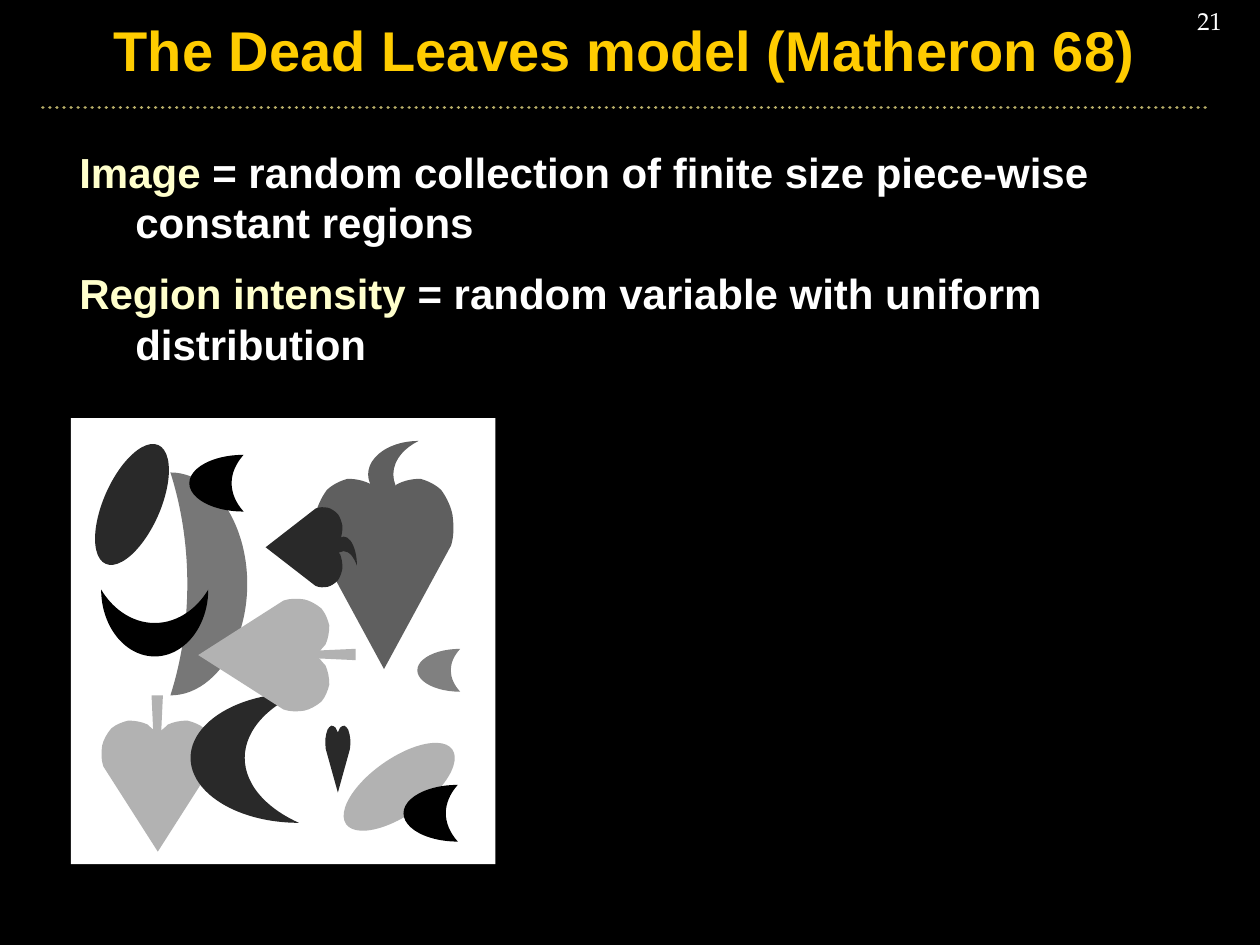
from pptx import Presentation
from pptx.dml.color import RGBColor
from pptx.enum import dml, shapes, text
from pptx.oxml import ns
from pptx.util import Pt
from lxml import etree

BLACK = RGBColor(0x00, 0x00, 0x00)
WHITE = RGBColor(0xFF, 0xFF, 0xFF)
GOLD = RGBColor(0xFF, 0xCC, 0x00)
CREAM = RGBColor(0xFF, 0xFF, 0xCC)
KHAKI = RGBColor(0xB8, 0xAE, 0x68)
CHARCOAL = RGBColor(0x29, 0x29, 0x29)
SLATE = RGBColor(0x5F, 0x5F, 0x5F)
GREY = RGBColor(0x77, 0x77, 0x77)
MID_GREY = RGBColor(0x80, 0x80, 0x80)
SILVER = RGBColor(0xB2, 0xB2, 0xB2)

LOBE = [
    (0, 0.1),
    (0.02, 0.08), (0.07, 0.05), (0.09, 0.03),
    (0.14, 0.01), (0.2, 0), (0.26, 0),
    (0.31, 0.01), (0.37, 0.03), (0.41, 0.06),
    (0.45, 0.1), (0.48, 0.15), (0.49, 0.19),
    (0.5, 0.25), (0.5, 0.3), (0.48, 0.35),
]
LEAF = ([(0.5 + u, v) for u, v in LOBE] + [(0.5, 1)]
        + [(0.5 - u, v) for u, v in reversed(LOBE)])
STEM = [(0, 0), (0.22, 1), (0.78, 1), (1, 0)]
OUTLINES = {"leaf": LEAF, "stem": STEM}
PRESETS = {
    "moon": shapes.MSO_SHAPE.MOON,
    "oval": shapes.MSO_SHAPE.OVAL,
    "panel": shapes.MSO_SHAPE.RECTANGLE,
}

LEAVES = [
    ("leaf", (17.3, 172.8, 64.8, 74.9), SILVER, {}),
    ("stem", (46.1, 158.4, 6.5, 31), SILVER, {}),
    ("leaf", (139, 34.6, 79.9, 108.7), SLATE, {}),
    ("moon", (169.9, 13, 28.8, 38.2), SLATE, {}),
    ("moon", (68.4, 157, 61.9, 74.2), CHARCOAL, {}),
    ("moon", (56.9, 31, 43.9, 127.4), GREY, {"adj": 0.78, "flip": True}),
    ("leaf", (145.4, 175.7, 14.4, 38.2), CHARCOAL, {}),
    ("leaf", (110.2, 51.8, 46.1, 43.9), CHARCOAL, {"rot": 90}),
    ("moon", (147.6, 68.4, 16.6, 15.1), CHARCOAL, {"rot": 90}),
    ("moon", (28.8, 86.4, 38.2, 61.2), BLACK, {"rot": 270}),
    ("leaf", (77.8, 97.9, 64.8, 74.9), SILVER, {"rot": 90}),
    ("stem", (144, 119.5, 6.5, 31), SILVER, {"rot": 90}),
    ("oval", (18.7, 12.2, 32.4, 74.2), CHARCOAL, {"rot": 23.9}),
    ("oval", (171.4, 173.5, 32.4, 74.2), SILVER, {"rot": 54.9}),
    ("moon", (190.1, 209.5, 31, 32.4), BLACK, {"adj": 0.78}),
    ("moon", (67.7, 20.9, 31, 32.4), BLACK, {"adj": 0.78}),
    ("moon", (198, 131.8, 24.5, 24.5), MID_GREY, {"adj": 0.78}),
]


def curve_lobes(sp):
    """Turn each three lobe segments of a leaf into one Bezier curve."""
    lines = list(sp.element.iter(ns.qn("a:lnTo")))
    n = len(LOBE) - 1
    for side in (lines[:n], lines[n + 2:2 * n + 2]):
        for i in range(0, n, 3):
            curve = etree.Element(ns.qn("a:cubicBezTo"))
            side[i].addprevious(curve)
            for line in side[i:i + 3]:
                curve.append(line[0])
                line.getparent().remove(line)


def add_piece(parent, kind, box, color, rot=0, adj=None, flip=False):
    """Draw one flat region of the given kind in its box."""
    x, y, w, h = box
    if kind in OUTLINES:
        pts = [(100 * (x + u * w), 100 * (y + v * h)) for u, v in OUTLINES[kind]]
        builder = parent.shapes.build_freeform(*pts[0], scale=Pt(1) / 100)
        builder.add_line_segments(pts[1:], close=True)
        sp = builder.convert_to_shape()
        if kind == "leaf":
            curve_lobes(sp)
    else:
        sp = parent.shapes.add_shape(PRESETS[kind], Pt(x), Pt(y), Pt(w), Pt(h))
    if adj is not None:
        sp.adjustments[0] = adj
    if flip:
        sp.element.spPr.find(ns.qn("a:xfrm")).set("flipH", "1")
    sp.rotation = rot
    sp.shadow.inherit = False
    sp.fill.solid()
    sp.fill.fore_color.rgb = color
    sp.line.fill.background()


def add_leaves(s, x, y, w, h):
    """Scatter the dead leaves over a white panel."""
    group = s.shapes.add_group_shape()
    add_piece(group, "panel", (x, y, w, h), WHITE)
    for kind, (dx, dy, pw, ph), color, options in LEAVES:
        add_piece(group, kind, (x + dx, y + dy, pw, ph), color, **options)


def add_text(s, box, paragraphs, size, font="Arial", bold=True):
    """Add a text box of coloured runs and return its text frame."""
    tf = s.shapes.add_textbox(*map(Pt, box)).text_frame
    tf.word_wrap = True
    for i, runs in enumerate(paragraphs):
        p = tf.add_paragraph() if i else tf.paragraphs[0]
        p.font.size, p.font.name, p.font.bold = Pt(size), font, bold
        for words, color in runs:
            r = p.add_run()
            r.text = words
            r.font.color.rgb = color
    return tf


def add_header(s, x, y, w, h):
    """Add the title, its dotted rule and the page number."""
    tf = add_text(s, (x, y, w, h), [[("The Dead Leaves model (Matheron 68)", GOLD)]], 32)
    tf.vertical_anchor = text.MSO_ANCHOR.MIDDLE
    tf.paragraphs[0].alignment = text.PP_ALIGN.CENTER

    rule_y = Pt(y + h - 10)
    rule = s.shapes.add_connector(
        shapes.MSO_CONNECTOR.STRAIGHT, Pt(x + 0.5), rule_y, Pt(x + w + 0.5), rule_y)
    rule.line.color.rgb = KHAKI
    rule.line.width = Pt(2)
    rule.line.dash_style = dml.MSO_LINE.ROUND_DOT
    rule.element.spPr.find(ns.qn("a:ln")).set("cap", "rnd")
    etree.SubElement(rule.element.spPr, ns.qn("a:effectLst"))

    number = add_text(s, (x + w - 11, 0, 24.5, 24), [[("21", WHITE)]], 14,
                      "TeX Gyre Pagella", bold=False)
    number.margin_left = number.margin_right = 0
    number.word_wrap = False
    number.paragraphs[0].alignment = text.PP_ALIGN.CENTER


def add_definitions(s, x, y, w, h):
    """Add the two definitions with hanging indents."""
    tf = add_text(s, (x, y, w, h), [
        [("Image", CREAM),
         (" = random collection of finite size piece-wise constant regions", WHITE)],
        [("Region intensity", CREAM),
         (" = random variable with uniform distribution", WHITE)],
    ], 24)
    for p in tf.paragraphs:
        p.space_before = Pt(12)
        pPr = p._p.get_or_add_pPr()
        pPr.set("marL", str(Pt(32)))
        pPr.set("indent", str(-Pt(32)))


def main():
    """Build the slide and save it."""
    prs = Presentation()
    prs.slide_width, prs.slide_height = Pt(720), Pt(540)
    s = prs.slides.add_slide(prs.slide_layouts[6])
    s.background.fill.solid()
    s.background.fill.fore_color.rgb = BLACK
    add_header(s, 24, -15, 666, 86.4)
    add_definitions(s, 38.2, 80, 652, 137)
    add_leaves(s, 40.5, 239, 242.6, 254.9)
    prs.save("out.pptx")


if __name__ == "__main__":
    main()
